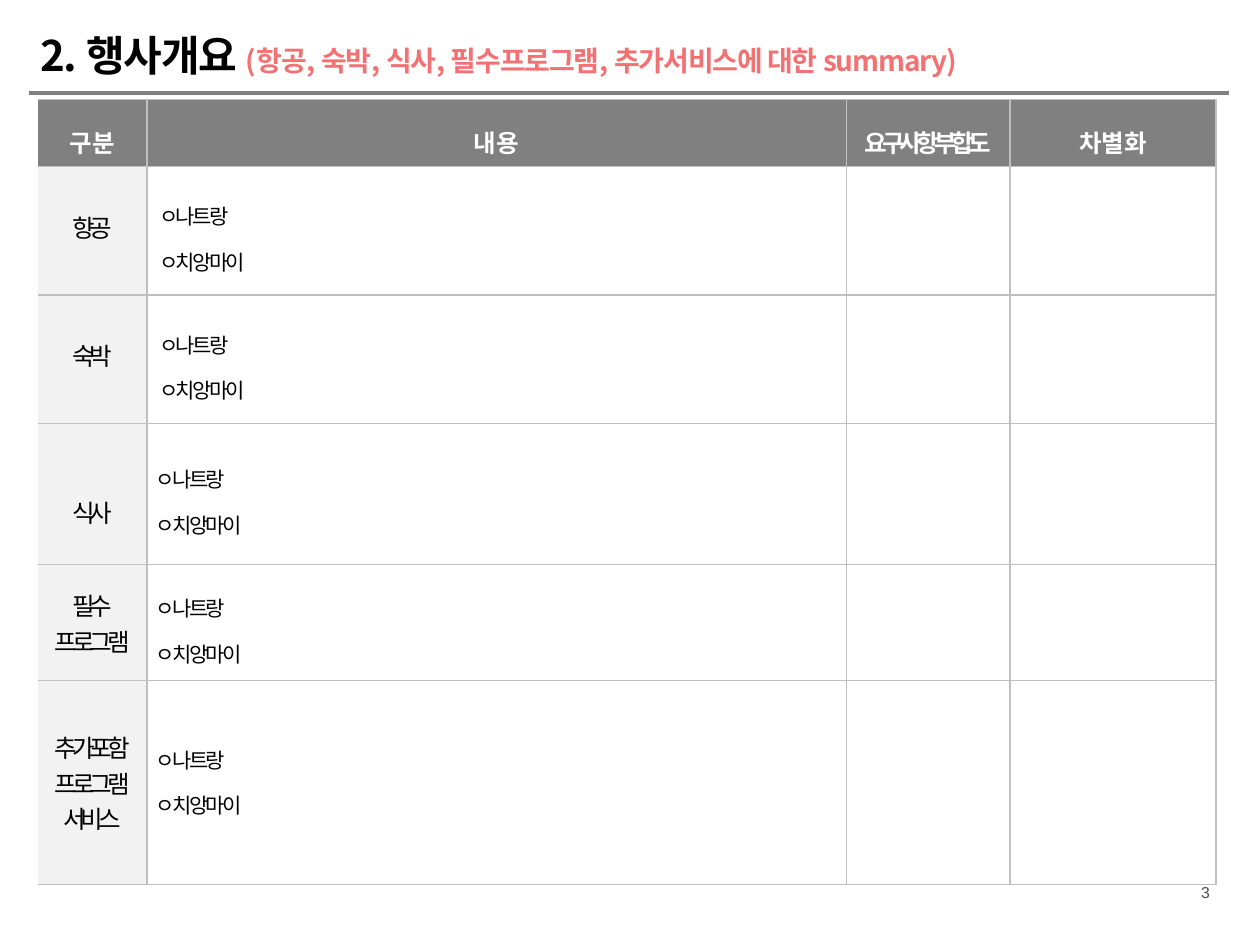
import pptx
import pptx.dml.color
import pptx.enum.shapes
import pptx.enum.text
import pptx.util
from pptx.oxml.ns import qn
from lxml import etree

Cm = pptx.util.Cm
ALIGN = pptx.enum.text.PP_ALIGN
ANCHOR = pptx.enum.text.MSO_ANCHOR

KOREAN = "Noto Sans CJK KR"
BLACK, WHITE, GREY = "000000", "FFFFFF", "808080"
CORAL, PALE, BORDER = "F27173", "F2F2F2", "BFBFBF"

COLUMNS = [2.2, 14.1, 3.3, 4.15]
HEADER_HEIGHT = 1.35
# heading, letter spacing
HEADINGS = [("구분", 0), ("내용", 0), ("요구사항부합도", -3), ("차별화", 0)]
DESTINATIONS = ["ㅇ나트랑", "ㅇ치앙마이"]
SIDE = 0.25  # side margin of the standard content cells
NARROW = 0.18
# label lines, row height, label spacing, label anchor, content margins (side, top, bottom)
CATEGORIES = [
    (["항공"], 2.59, 2, ANCHOR.TOP, (SIDE, 0.13, 0.13)),
    (["숙박"], 2.59, 2, ANCHOR.TOP, (SIDE, 0.13, 0.13)),
    (["식사"], 2.84, 2, ANCHOR.MIDDLE, (NARROW, 0, 0)),
    (["필수", "프로그램"], 2.34, 1, ANCHOR.MIDDLE, (NARROW, 0, 0)),
    (["추가 포함", "프로그램", "서비스"], 4.11, 1, ANCHOR.MIDDLE, (NARROW, 0, 0.33)),
]


def colour(hex_string):
    return pptx.dml.color.RGBColor.from_string(hex_string)


def style_paragraph(paragraph, size, hex_string, name=KOREAN, bold=False,
                    spacing=0, align=ALIGN.LEFT, line_spacing=1.0):
    paragraph.alignment = align
    paragraph.line_spacing = line_spacing
    font = paragraph.font
    font.size = pptx.util.Pt(size)
    font.name = name
    font.bold = bold
    font.color.rgb = colour(hex_string)
    # East Asian typeface and letter spacing
    properties = paragraph._p.pPr.find(qn("a:defRPr"))
    properties.set("spc", str(round(spacing * 100)))
    etree.SubElement(properties, qn("a:ea")).set("typeface", name)


def write_lines(frame, lines, **style):
    for index, line in enumerate(lines):
        paragraph = frame.paragraphs[0] if index == 0 else frame.add_paragraph()
        paragraph.text = line
        style_paragraph(paragraph, **style)


def set_borders(cell, sides):
    properties = cell._tc.get_or_add_tcPr()
    for side in "LRTB":
        line = etree.SubElement(properties, qn("a:ln" + side), w="12700")
        if side in sides:
            fill = etree.SubElement(line, qn("a:solidFill"))
            etree.SubElement(fill, qn("a:srgbClr"), val=BORDER)
        else:
            etree.SubElement(line, qn("a:noFill"))


def fill_cell(cell, hex_string, sides="LRTB"):
    set_borders(cell, sides)
    cell.fill.solid()
    cell.fill.fore_color.rgb = colour(hex_string)


def add_heading(slide, left, top, width, height):
    # Title
    title = slide.shapes.title
    title.left, title.top = Cm(left + 0.23), Cm(top)
    title.width, title.height = Cm(width - 1.9), Cm(height)
    frame = title.text_frame
    frame.auto_size = pptx.enum.text.MSO_AUTO_SIZE.NONE
    frame.vertical_anchor = ANCHOR.MIDDLE
    frame.margin_left = frame.margin_right = frame.margin_top = frame.margin_bottom = 0
    paragraph = frame.paragraphs[0]
    style_paragraph(paragraph, 24, BLACK, bold=True, spacing=-0.6, line_spacing=0.9)
    paragraph.add_run().text = "2. 행사개요 "
    summary = paragraph.add_run()
    summary.text = "(항공, 숙박, 식사, 필수프로그램, 추가서비스에 대한 summary)"
    summary.font.size = pptx.util.Pt(16)
    summary.font.color.rgb = colour(CORAL)

    # Rule below the title
    rule_y = Cm(top + height + 0.1)
    rule = slide.shapes.add_connector(pptx.enum.shapes.MSO_CONNECTOR.STRAIGHT,
                                      Cm(left), rule_y, Cm(left + width), rule_y)
    rule.line.color.rgb = colour(GREY)
    rule.line.width = pptx.util.Pt(2.25)
    etree.SubElement(rule._element.spPr, qn("a:effectLst"))


def add_overview(slide, left, top):
    heights = [HEADER_HEIGHT] + [category[1] for category in CATEGORIES]
    table = slide.shapes.add_table(len(heights), len(COLUMNS), Cm(left), Cm(top),
                                   Cm(sum(COLUMNS)), Cm(sum(heights))).table
    table.horz_banding = False
    for column, width in zip(table.columns, COLUMNS):
        column.width = Cm(width)
    for row, height in zip(table.rows, heights):
        row.height = Cm(height)

    # Header row
    for index, (heading, spacing) in enumerate(HEADINGS):
        cell = table.cell(0, index)
        fill_cell(cell, GREY, "LRTB" if index else "RTB")
        cell.vertical_anchor = ANCHOR.MIDDLE
        write_lines(cell.text_frame, [heading], size=14, hex_string=WHITE, bold=True,
                    spacing=spacing, align=ALIGN.CENTER, line_spacing=1.5)

    # Category rows
    for index, (labels, _, spacing, anchor, margins) in enumerate(CATEGORIES, 1):
        label, content, *blanks = table.rows[index].cells
        fill_cell(label, PALE, "RTB")
        label.vertical_anchor = anchor
        write_lines(label.text_frame, labels, size=14, hex_string=BLACK, spacing=-3,
                    align=ALIGN.CENTER, line_spacing=float(spacing))

        fill_cell(content, WHITE)
        content.vertical_anchor = ANCHOR.MIDDLE
        side, above, below = margins
        content.margin_left = content.margin_right = Cm(side)
        content.margin_top, content.margin_bottom = Cm(above), Cm(below)
        write_lines(content.text_frame, DESTINATIONS, size=12, hex_string=BLACK,
                    spacing=-1.5, line_spacing=1.5)
        for blank in blanks:
            fill_cell(blank, WHITE)


def add_page_number(slide, left, top, width, height):
    box = slide.shapes.add_textbox(Cm(left), Cm(top), Cm(width), Cm(height))
    box.text_frame.word_wrap = False
    write_lines(box.text_frame, ["3"], size=9, hex_string="4C4C4E", name="Arial",
                spacing=-0.6, align=ALIGN.CENTER)


def main():
    presentation = pptx.Presentation()
    presentation.slide_width, presentation.slide_height = Cm(25.4), Cm(19.05)
    slide = presentation.slides.add_slide(presentation.slide_layouts[5])
    add_heading(slide, 0.58, 0.56, 24.2, 1.22)
    add_overview(slide, 0.76, 2.01)
    add_page_number(slide, 23.88, 17.68, 0.84, 0.64)
    presentation.save("out.pptx")


if __name__ == "__main__":
    main()
